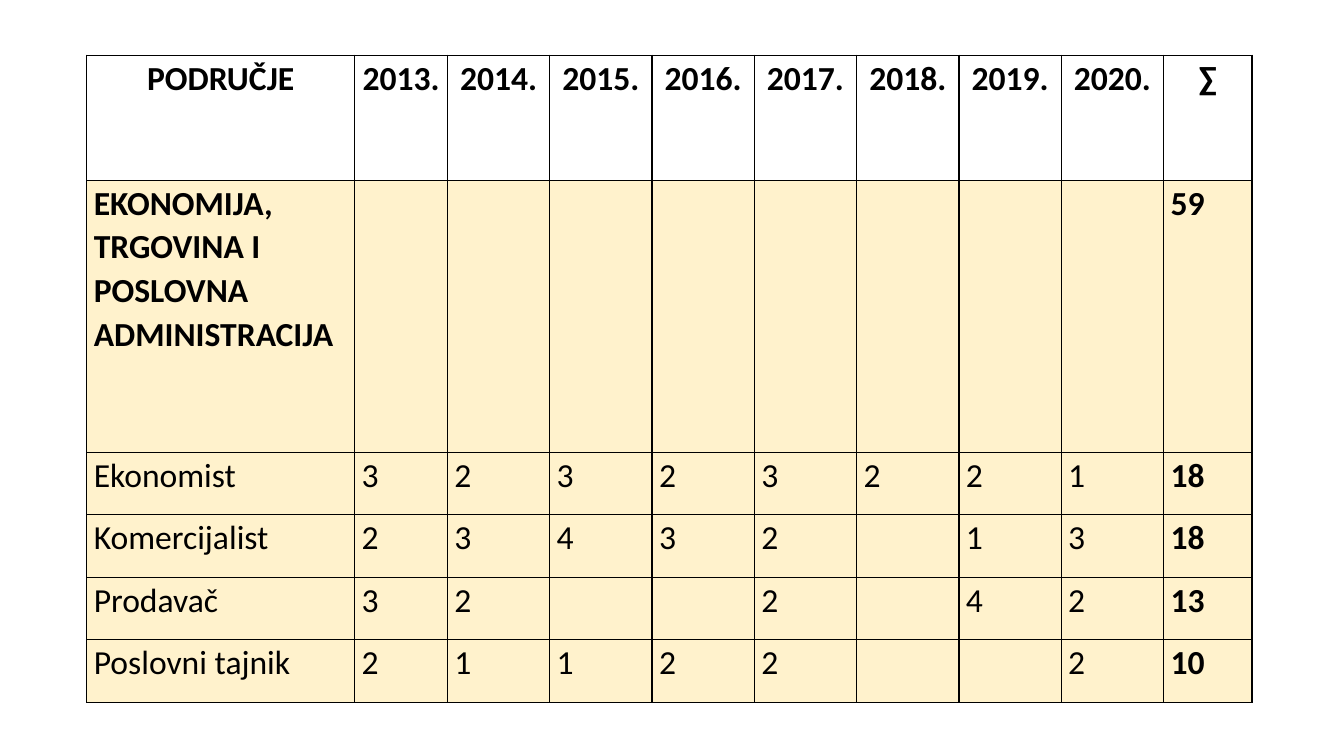
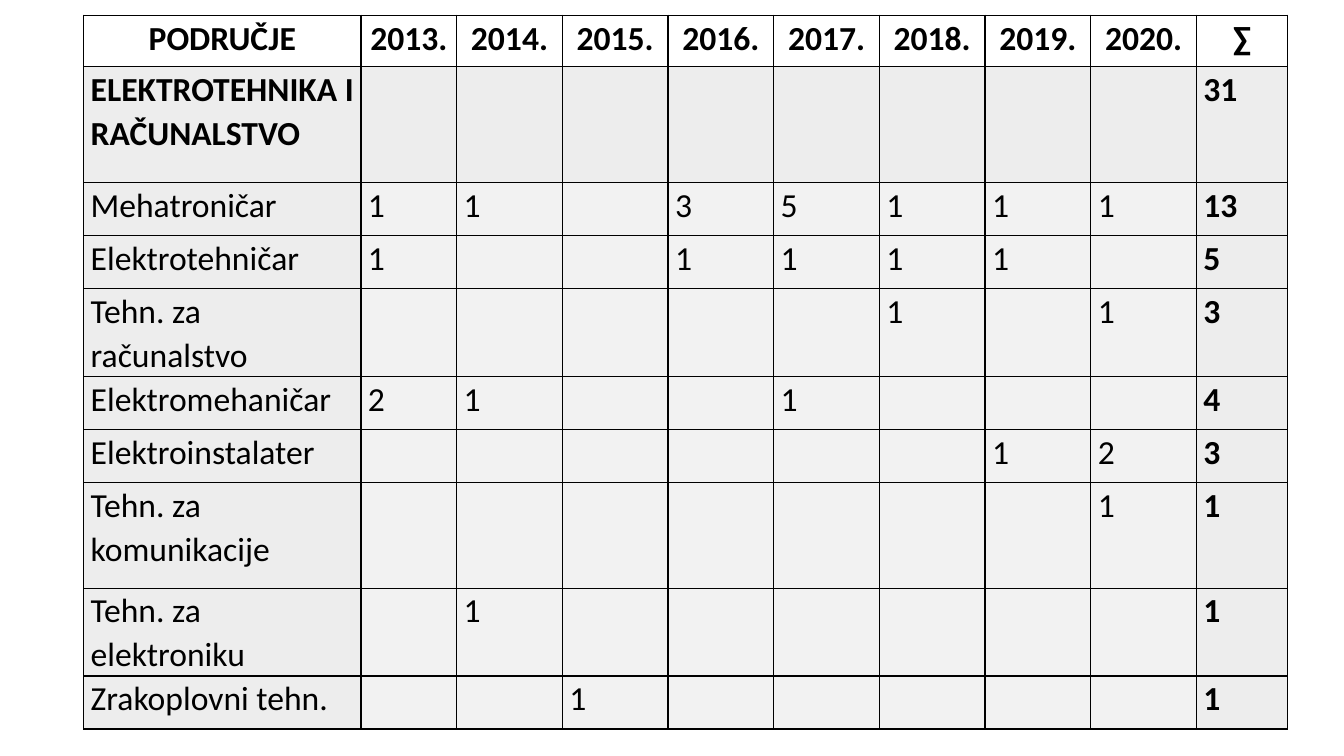
import dataclasses

import pptx
import pptx.dml.color
import pptx.enum.text
import pptx.oxml
import pptx.oxml.ns
import pptx.slide
import pptx.table
import pptx.util

Pt = pptx.util.Pt

COLOURS = {"ink": "000000", "cream": "FFF2CC", "grey": "EDEDED", "light": "F2F2F2"}
FONT = "Calibri"
TEXT_SIZE = 24
LINE_SPACING = 1.07
SIDE_MARGIN = 5
BORDER_WIDTH = 1
YEARS = range(2013, 2021)
NO_COUNTS = (0,) * len(YEARS)


@dataclasses.dataclass(frozen=True)
class Row:
    """One table row; a count of 0 leaves its cell empty."""
    name: str
    counts: tuple[int, ...]
    total: int
    height: float
    is_field: bool = False


@dataclasses.dataclass(frozen=True)
class Columns:
    name: float
    first_year: float
    year: float
    total: float

    def widths(self) -> list[float]:
        return [self.name, self.first_year, *[self.year] * (len(YEARS) - 1), self.total]


@dataclasses.dataclass(frozen=True)
class FieldSlide:
    left: float
    top: float
    columns: Columns
    header_height: float
    edge_fill: str
    count_fill: str
    rows: tuple[Row, ...]
    separate_header: bool = False


# Content
FIELD_SLIDES = (
    FieldSlide(
        left=62, top=39.5, columns=Columns(191.4, 66.2, 73.1, 63.2),
        header_height=89.3, edge_fill="cream", count_fill="cream",
        rows=(
            Row("EKONOMIJA, TRGOVINA I POSLOVNA ADMINISTRACIJA", NO_COUNTS, 59, 194.4, True),
            Row("Ekonomist", (3, 2, 3, 2, 3, 2, 2, 1), 18, 44.6),
            Row("Komercijalist", (2, 3, 4, 3, 2, 0, 1, 3), 18, 44.6),
            Row("Prodavač", (3, 2, 0, 0, 2, 0, 4, 2), 13, 44.6),
            Row("Poslovni tajnik", (2, 1, 1, 2, 2, 0, 0, 2), 10, 44.6),
        ),
    ),
    FieldSlide(
        left=59.8, top=10.9, columns=Columns(198, 68.4, 75.5, 65.2),
        header_height=36.6, edge_fill="grey", count_fill="light", separate_header=True,
        rows=(
            Row("ELEKTROTEHNIKA I RAČUNALSTVO", NO_COUNTS, 31, 82.8, True),
            Row("Mehatroničar", (1, 1, 0, 3, 5, 1, 1, 1), 13, 37.9),
            Row("Elektrotehničar", (1, 0, 0, 1, 1, 1, 1, 0), 5, 37.9),
            Row("Tehn. za računalstvo", (0, 0, 0, 0, 0, 1, 0, 1), 3, 60),
            Row("Elektromehaničar", (2, 1, 0, 0, 1, 0, 0, 0), 4, 37.9),
            Row("Elektroinstalater", (0, 0, 0, 0, 0, 0, 1, 2), 3, 37.9),
            Row("Tehn. za komunikacije", (0, 0, 0, 0, 0, 0, 0, 1), 1, 75.6),
            Row("Tehn. za elektroniku", (0, 1, 0, 0, 0, 0, 0, 0), 1, 60),
            Row("Zrakoplovni tehn.", (0, 0, 1, 0, 0, 0, 0, 0), 1, 37.9),
        ),
    ),
)


# Cells
def add_borders(cell: pptx.table._Cell) -> None:
    properties = cell._tc.get_or_add_tcPr()
    for position, side in enumerate(("lnL", "lnR", "lnT", "lnB")):
        line = pptx.oxml.parse_xml(
            f'<a:{side} {pptx.oxml.ns.nsdecls("a")} w="{Pt(BORDER_WIDTH)}"><a:solidFill>'
            f'<a:srgbClr val="{COLOURS["ink"]}"/></a:solidFill></a:{side}>'
        )
        properties.insert(position, line)


def format_cell(cell: pptx.table._Cell, text: str, bold: bool,
                fill: str | None, centred: bool) -> None:
    cell.margin_left = cell.margin_right = Pt(SIDE_MARGIN)
    cell.margin_top = cell.margin_bottom = Pt(0)
    if fill is None:
        cell.fill.background()
    else:
        cell.fill.solid()
        cell.fill.fore_color.rgb = pptx.dml.color.RGBColor.from_string(COLOURS[fill])
    add_borders(cell)
    cell.text_frame.text = text
    paragraph = cell.text_frame.paragraphs[0]
    paragraph.line_spacing = LINE_SPACING
    if centred:
        paragraph.alignment = pptx.enum.text.PP_ALIGN.CENTER
    for run in paragraph.runs:
        run.font.name = FONT
        run.font.size = Pt(TEXT_SIZE)
        run.font.bold = bold
        run.font.color.rgb = pptx.dml.color.RGBColor.from_string(COLOURS["ink"])


# Tables
def add_grid(slide: pptx.slide.Slide, left: float, top: float,
             widths: list[float], heights: list[float]) -> pptx.table.Table:
    table = slide.shapes.add_table(
        len(heights), len(widths), Pt(left), Pt(top), Pt(sum(widths)), Pt(sum(heights))
    ).table
    table.first_row = table.horz_banding = False
    for column, width in zip(table.columns, widths):
        column.width = Pt(width)
    for row, height in zip(table.rows, heights):
        row.height = Pt(height)
    return table


def fill_header(table: pptx.table.Table) -> None:
    labels = ["PODRUČJE", *[f"{year}." for year in YEARS], "∑"]
    for column, label in enumerate(labels):
        format_cell(table.cell(0, column), label, bold=True, fill=None, centred=True)


def fill_rows(table: pptx.table.Table, field: FieldSlide, first_row: int) -> None:
    last_column = len(YEARS) + 1
    for row_index, row in enumerate(field.rows, first_row):
        texts = [row.name, *[str(count or "") for count in row.counts], str(row.total)]
        for column, text in enumerate(texts):
            is_edge = row.is_field or column in (0, last_column)
            format_cell(
                table.cell(row_index, column), text,
                bold=row.is_field or column == last_column,
                fill=field.edge_fill if is_edge else field.count_fill,
                centred=False,
            )


def add_field_slide(presentation, field: FieldSlide) -> None:
    slide = presentation.slides.add_slide(presentation.slide_layouts[6])
    widths = field.columns.widths()
    heights = [row.height for row in field.rows]
    if field.separate_header:
        header = add_grid(slide, field.left, field.top, widths, [field.header_height])
        body = add_grid(slide, field.left, field.top + field.header_height, widths, heights)
        first_row = 0
    else:
        header = body = add_grid(slide, field.left, field.top, widths,
                                 [field.header_height, *heights])
        first_row = 1
    fill_header(header)
    fill_rows(body, field, first_row)


def main() -> None:
    presentation = pptx.Presentation()
    presentation.slide_width = Pt(960)
    presentation.slide_height = Pt(540)
    for field in FIELD_SLIDES:
        add_field_slide(presentation, field)
    presentation.save("out.pptx")


if __name__ == "__main__":
    main()
